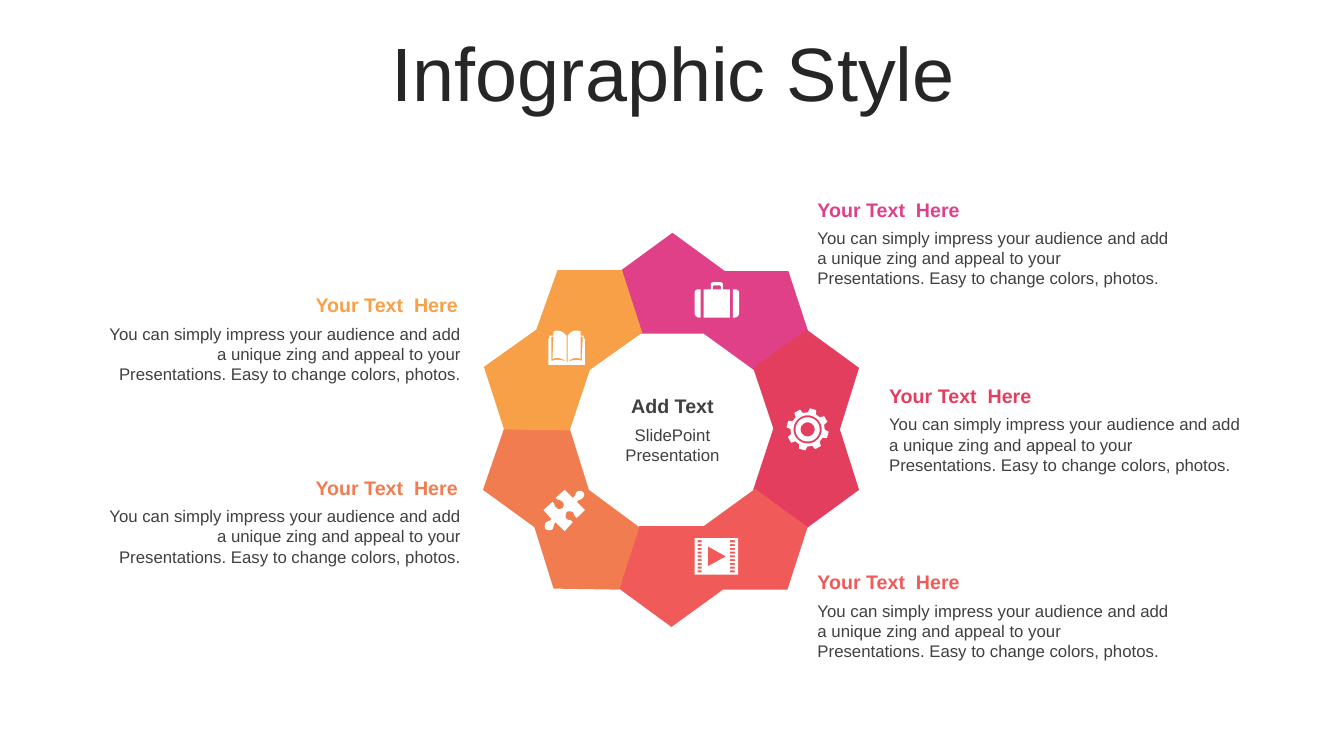
from math import cos, radians, sin

from pptx import Presentation
from pptx.dml.color import RGBColor
from pptx.enum import text
from pptx.util import Inches, Pt

PINK = RGBColor(0xE0, 0x40, 0x88)
CRIMSON = RGBColor(0xE4, 0x3E, 0x5F)
RED = RGBColor(0xF0, 0x5A, 0x59)
CORAL = RGBColor(0xF0, 0x7C, 0x4F)
AMBER = RGBColor(0xF8, 0xA0, 0x47)
WHITE = RGBColor(0xFF, 0xFF, 0xFF)
TITLE_GREY = RGBColor(0x26, 0x26, 0x26)
TEXT_GREY = RGBColor(0x40, 0x40, 0x40)

LEFT, CENTER, RIGHT = text.PP_ALIGN.LEFT, text.PP_ALIGN.CENTER, text.PP_ALIGN.RIGHT
BODY = ("You can simply impress your audience and add a unique zing and appeal "
        "to your Presentations. Easy to change colors, photos.")

presentation = Presentation()
presentation.slide_width = Inches(13.33)
presentation.slide_height = Inches(7.5)
slide = presentation.slides.add_slide(presentation.slide_layouts[6])


def add_outline(contours, color):
    """Fill closed contours; a pair is a corner, six numbers are a Bezier curve."""
    builder = None
    for contour in contours:
        points = []
        for step in contour:
            if len(step) == 2:
                points.append(step)
                continue
            x0, y0 = points[-1]
            x1, y1, x2, y2, x3, y3 = step
            for t in (0.25, 0.5, 0.75, 1):
                a, b, c, d = (1 - t) ** 3, 3 * t * (1 - t) ** 2, 3 * t * t * (1 - t), t ** 3
                points.append((a * x0 + b * x1 + c * x2 + d * x3,
                               a * y0 + b * y1 + c * y2 + d * y3))
        corners = [(Inches(x), Inches(y)) for x, y in points]
        if builder is None:
            builder = slide.shapes.build_freeform(*corners[0])
        else:
            builder.move_to(*corners[0])
        builder.add_line_segments(corners[1:], close=True)
    shape = builder.convert_to_shape()
    shape.shadow.inherit = False
    shape.fill.solid()
    shape.fill.fore_color.rgb = color
    shape.line.fill.background()


def add_text(words, left, top, width, height, size, color, align, bold=False):
    box = slide.shapes.add_textbox(Inches(left), Inches(top), Inches(width), Inches(height))
    box.text_frame.word_wrap = True
    paragraph = box.text_frame.paragraphs[0]
    paragraph.text = words
    paragraph.alignment = align
    paragraph.font.name = "Arial"
    paragraph.font.size = Pt(size)
    paragraph.font.bold = bold
    paragraph.font.color.rgb = color
    return box


title = add_text("Infographic Style", 0.35, 0.37, 12.66, 0.79, 54, TITLE_GREY, CENTER)
title.text_frame.vertical_anchor = text.MSO_ANCHOR.MIDDLE
title.text_frame.paragraphs[0].line_spacing = 0.9

# Ring of five segments
ring = [
    (PINK, [(6.67, 2.31), (7.19, 2.69), (7.82, 2.69), (8.02, 3.3),
            (7.49, 3.68), (6.98, 3.31), (6.35, 3.31), (6.15, 2.69)]),
    (CRIMSON, [(8, 3.27), (8.52, 3.65), (8.33, 4.26), (8.52, 4.86),
               (8, 5.24), (7.47, 4.86), (7.67, 4.25), (7.47, 3.65)]),
    (RED, [(7.49, 4.85), (8.01, 5.23), (7.81, 5.85), (7.17, 5.85),
           (6.66, 6.22), (6.14, 5.84), (6.34, 5.22), (6.98, 5.22)]),
    (CORAL, [(5, 4.25), (5.65, 4.25), (5.84, 4.86), (6.34, 5.23),
             (6.14, 5.85), (5.49, 5.84), (5.3, 5.23), (4.79, 4.86)]),
    (AMBER, [(5.53, 2.68), (6.17, 2.68), (6.37, 3.3), (5.85, 3.67),
             (5.65, 4.27), (5, 4.26), (4.8, 3.64), (5.32, 3.27)]),
]
for color, segment in ring:
    add_outline([segment], color)

add_text("Add Text", 5.97, 3.86, 1.4, 0.34, 14, TEXT_GREY, CENTER, bold=True)
add_text("SlidePoint Presentation", 5.97, 4.16, 1.4, 0.5, 12, TEXT_GREY, CENTER)

# Captions around the ring
captions = [
    (8.01, 1.91, PINK, LEFT),
    (8.72, 3.76, CRIMSON, LEFT),
    (8.01, 5.61, RED, LEFT),
    (0.97, 4.67, CORAL, RIGHT),
    (0.97, 2.86, AMBER, RIGHT),
]
for left, top, color, align in captions:
    add_text(BODY, left, top + 0.3, 3.7, 0.71, 12, TEXT_GREY, align)
    add_text("Your Text  Here", left, top, 3.67, 0.34, 14, color, align, bold=True)

puzzle = [
    (5.78, 4.88), (5.8, 4.89, 5.8, 4.92, 5.78, 4.94), (5.77, 4.96, 5.74, 4.95, 5.72, 4.98),
    (5.8, 5.06), (5.72, 5.14), (5.69, 5.12, 5.7, 5.1, 5.68, 5.08),
    (5.66, 5.07, 5.63, 5.07, 5.62, 5.08), (5.61, 5.1, 5.6, 5.13, 5.62, 5.15),
    (5.65, 5.17, 5.66, 5.15, 5.68, 5.18), (5.6, 5.27), (5.51, 5.18),
    (5.48, 5.21, 5.5, 5.22, 5.48, 5.25), (5.46, 5.27, 5.43, 5.26, 5.41, 5.25),
    (5.4, 5.23, 5.4, 5.21, 5.41, 5.19), (5.43, 5.16, 5.45, 5.18, 5.47, 5.15),
    (5.39, 5.06), (5.48, 4.98), (5.51, 5, 5.49, 5.02, 5.52, 5.04),
    (5.54, 5.06, 5.56, 5.05, 5.58, 5.04), (5.59, 5.03, 5.6, 5, 5.58, 4.98),
    (5.55, 4.95, 5.54, 4.97, 5.51, 4.94), (5.6, 4.86), (5.68, 4.94),
    (5.71, 4.92, 5.7, 4.91, 5.72, 4.88), (5.74, 4.86, 5.77, 4.87, 5.78, 4.88),
]
add_outline([puzzle], WHITE)

book = [
    (5.62, 3.59), (5.63, 3.59), (5.69, 3.57, 5.71, 3.56, 5.77, 3.58), (5.78, 3.34),
    (5.76, 3.34), (5.76, 3.56), (5.72, 3.54, 5.67, 3.55, 5.63, 3.59), (5.63, 3.33),
    (5.65, 3.3, 5.68, 3.28, 5.71, 3.28), (5.72, 3.28, 5.74, 3.28, 5.76, 3.29),
    (5.76, 3.33), (5.79, 3.33), (5.79, 3.36), (5.8, 3.36), (5.8, 3.62), (5.44, 3.62),
    (5.44, 3.36), (5.45, 3.36), (5.45, 3.33), (5.49, 3.33), (5.49, 3.29),
    (5.5, 3.28, 5.52, 3.28, 5.53, 3.28), (5.57, 3.28, 5.59, 3.3, 5.62, 3.33),
    (5.62, 3.59), (5.57, 3.55, 5.53, 3.54, 5.48, 3.56), (5.49, 3.34), (5.47, 3.34),
    (5.47, 3.58), (5.53, 3.56, 5.57, 3.57, 5.62, 3.59),
]
add_outline([book], WHITE)

# Film frame with two columns of perforations and a play triangle
film = [[(6.89, 5.34), (7.32, 5.34), (7.32, 5.7), (6.89, 5.7)],
        [(7.02, 5.42), (7.02, 5.62), (7.2, 5.52)]]
for row in range(9):
    top = 5.36 + row * 0.3 / 8
    for left, right in ((6.92, 6.96), (7.24, 7.29)):
        film.append([(left, top), (right, top), (right, top + 0.02), (left, top + 0.02)])
add_outline(film, WHITE)

suitcase = [
    [(7.27, 2.87), (7.29, 2.87), (7.31, 2.87, 7.33, 2.88, 7.33, 2.9), (7.33, 3.11),
     (7.33, 3.13, 7.31, 3.15, 7.29, 3.15), (7.27, 3.15)],
    [(6.93, 2.87), (6.95, 2.87), (6.95, 3.15), (6.93, 3.15),
     (6.91, 3.15, 6.89, 3.13, 6.89, 3.11), (6.89, 2.9),
     (6.89, 2.88, 6.91, 2.87, 6.93, 2.87)],
    [(7.08, 2.83), (7.07, 2.84), (7.07, 2.87), (7.15, 2.87), (7.15, 2.84), (7.14, 2.83)],
    [(7.07, 2.8), (7.15, 2.8), (7.16, 2.8, 7.17, 2.81, 7.17, 2.82), (7.17, 2.87),
     (7.24, 2.87), (7.24, 3.15), (6.98, 3.15), (6.98, 2.87), (7.05, 2.87),
     (7.05, 2.82), (7.05, 2.81, 7.06, 2.8, 7.07, 2.8)],
]
add_outline(suitcase, WHITE)

# Gear: eight teeth around three concentric circles
gear_teeth = [(angle + offset, radius)
              for angle in range(-75, 285, 45)
              for offset, radius in ((-14, 0.17), (-9, 0.21), (9, 0.21), (14, 0.17))]
gear_polar = [gear_teeth] + [[(angle, radius) for angle in range(0, 360, 10)]
                             for radius in (0.14, 0.12, 0.07)]
add_outline([[(8.01 + radius * cos(radians(angle)), 4.26 + radius * sin(radians(angle)))
              for angle, radius in contour] for contour in gear_polar], WHITE)

presentation.save("out.pptx")
